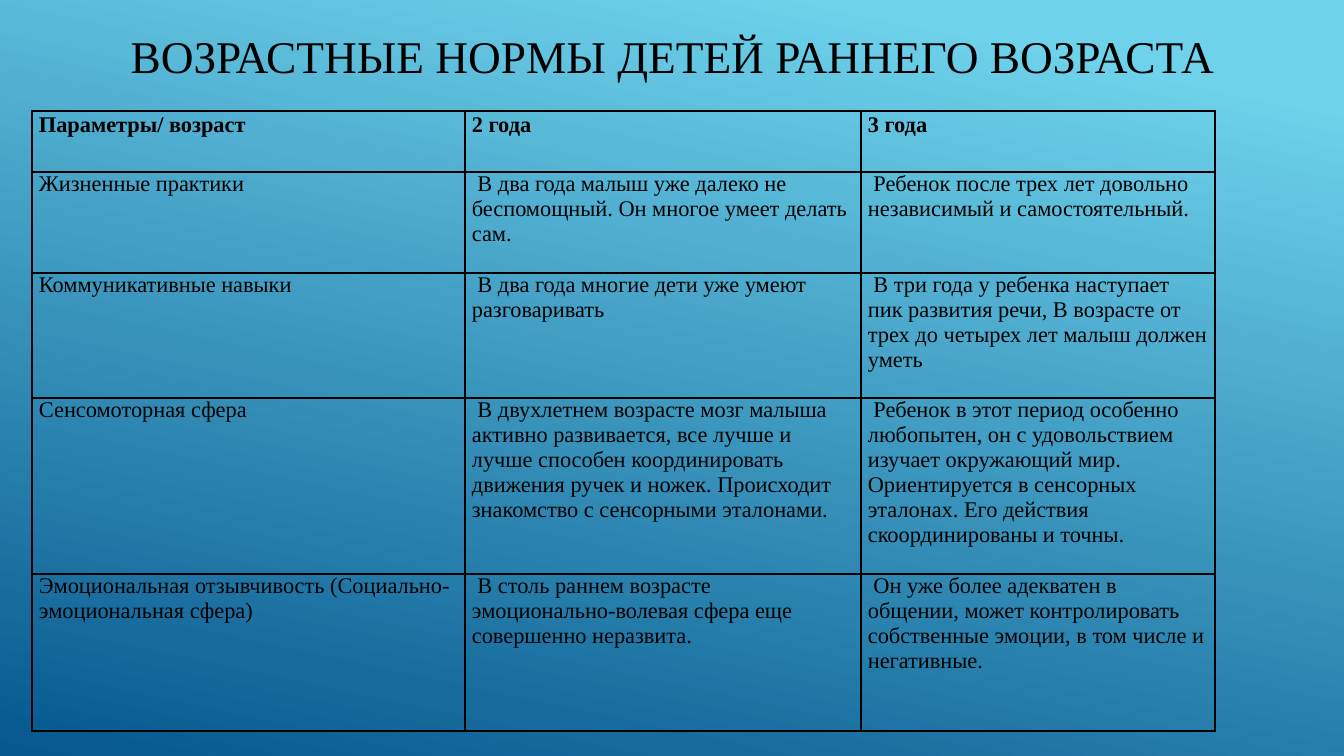
from lxml.etree import SubElement
from pptx import Presentation
from pptx.dml.color import RGBColor
from pptx.enum.text import MSO_ANCHOR, MSO_AUTO_SIZE, PP_ALIGN
from pptx.oxml.ns import qn
from pptx.util import Emu, Pt

PX = 914400 / 100.8
COLORS = {"sky": "6ED2EB", "sea": "06588E", "ink": "000000"}
FONT = "Times New Roman"


def px(length):
    return Emu(round(length * PX))


def apply(target, formats):
    for name, value in formats.items():
        setattr(target, name, value)


class NormsSlide:
    def __init__(self, deck, layout):
        self.slide = deck.slides.add_slide(layout)

    def background(self, stops, angle):
        fill = self.slide.background.fill
        fill.gradient()
        fill.gradient_angle = 360 - angle  # python-pptx counts counter-clockwise
        for stop, (position, color) in zip(fill.gradient_stops, stops):
            stop.position = position
            stop.color.rgb = RGBColor.from_string(COLORS[color])

    def add_words(self, paragraph, text, size, bold=False):
        run = paragraph.add_run()
        run.text = text
        apply(run.font, {"name": FONT, "size": Pt(size), "bold": bold})
        run.font.color.rgb = RGBColor.from_string(COLORS["ink"])

    def title(self, text, left, top, width, height, size):
        heading = self.slide.shapes.title
        apply(heading, {"left": px(left), "top": px(top),
                        "width": px(width), "height": px(height)})
        frame = heading.text_frame
        apply(frame, {"word_wrap": True, "auto_size": MSO_AUTO_SIZE.NONE,
                      "vertical_anchor": MSO_ANCHOR.MIDDLE})
        frame.paragraphs[0].alignment = PP_ALIGN.CENTER
        self.add_words(frame.paragraphs[0], text, size)

    def border(self, cell):
        properties = cell._tc.get_or_add_tcPr()
        for side in ("lnL", "lnR", "lnT", "lnB"):
            line = SubElement(properties, qn(f"a:{side}"), w=str(Pt(1)))
            solid = SubElement(line, qn("a:solidFill"))
            SubElement(solid, qn("a:srgbClr"), val=COLORS["ink"])

    def table(self, rows, left, top, widths, heights, size):
        grid = self.slide.shapes.add_table(
            len(heights), len(widths), px(left), px(top),
            px(sum(widths)), px(sum(heights))).table
        apply(grid, {"first_row": False, "horz_banding": False})
        for column, width in zip(grid.columns, widths):
            column.width = px(width)
        for row, height in zip(grid.rows, heights):
            row.height = px(height)
        for r, texts in enumerate(rows):
            for c, text in enumerate(texts):
                cell = grid.cell(r, c)
                apply(cell, {"margin_left": px(7), "margin_right": px(7),
                             "margin_top": 0, "margin_bottom": 0,
                             "vertical_anchor": MSO_ANCHOR.TOP})
                self.border(cell)
                cell.fill.background()
                paragraph = cell.text_frame.paragraphs[0]
                if r == 0:
                    paragraph.line_spacing = 1.07
                self.add_words(paragraph, text, size, bold=r == 0)


# Wording: header row, then one row per area of development
NORMS = [
    ("Параметры/ возраст", "2 года", "3 года"),
    ("Жизненные практики",
     " В два года малыш уже далеко не беспомощный. Он многое умеет делать сам.",
     " Ребенок после трех лет довольно независимый и самостоятельный."),
    ("Коммуникативные навыки",
     " В два года многие дети уже умеют разговаривать",
     " В три года у ребенка наступает пик развития речи, В возрасте от трех "
     "до четырех лет малыш должен уметь"),
    ("Сенсомоторная сфера",
     " В двухлетнем возрасте мозг малыша активно развивается, все лучше и "
     "лучше способен координировать движения ручек и ножек. Происходит "
     "знакомство с сенсорными эталонами.",
     " Ребенок в этот период особенно любопытен, он с удовольствием изучает "
     "окружающий мир. Ориентируется в сенсорных эталонах. Его действия "
     "скоординированы и точны."),
    ("Эмоциональная отзывчивость (Социально-эмоциональная сфера)",
     " В столь раннем возрасте эмоционально-волевая сфера еще совершенно "
     "неразвита.",
     " Он уже более адекватен в общении, может контролировать собственные "
     "эмоции, в том числе и негативные."),
]


def main():
    deck = Presentation()
    apply(deck, {"slide_width": px(1344), "slide_height": px(756)})
    norms = NormsSlide(deck, deck.slide_layouts[5])

    # Background and title
    norms.background([(0.1, "sky"), (1.0, "sea")], angle=102)
    norms.title("ВОЗРАСТНЫЕ НОРМЫ ДЕТЕЙ РАННЕГО ВОЗРАСТА",
                93, 0, 1159, 111, size=32.4)

    # Table of norms by age
    norms.table(NORMS, 32, 111, widths=(433, 396, 354),
                heights=(61, 101, 125, 176, 157), size=16)
    deck.save("out.pptx")


if __name__ == "__main__":
    main()
